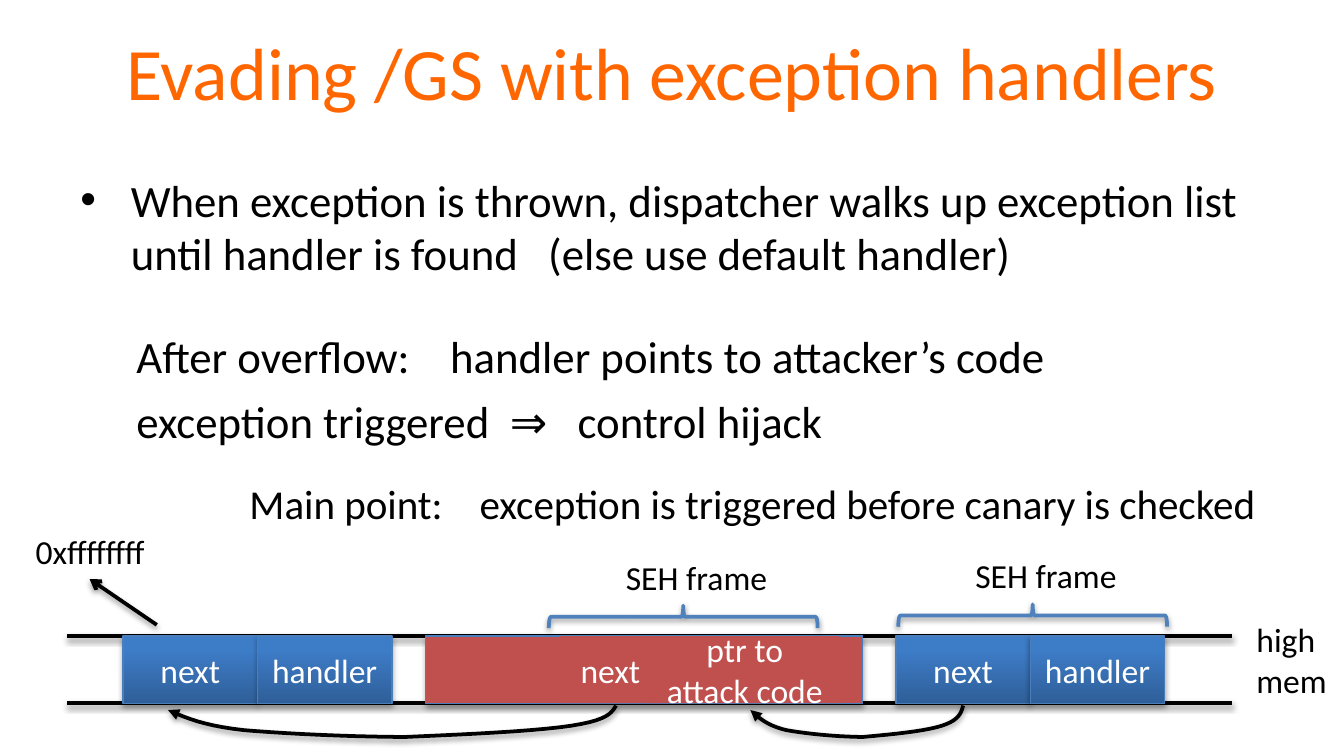
"""Slide on evading /GS through exception handlers, laid out on a 1/12 inch grid."""
from typing import NamedTuple

from lxml import etree
from pptx import Presentation
from pptx.dml.color import RGBColor
from pptx.enum.shapes import MSO_CONNECTOR, MSO_SHAPE
from pptx.enum.text import MSO_ANCHOR, MSO_AUTO_SIZE, PP_ALIGN
from pptx.oxml.ns import qn
from pptx.util import Emu, Inches, Pt

RECT, BRACE = MSO_SHAPE.RECTANGLE, MSO_SHAPE.LEFT_BRACE
STRAIGHT = MSO_CONNECTOR.STRAIGHT
LEFT, CENTER = PP_ALIGN.LEFT, PP_ALIGN.CENTER
TOP, MIDDLE = MSO_ANCHOR.TOP, MSO_ANCHOR.MIDDLE
GROW = MSO_AUTO_SIZE.SHAPE_TO_FIT_TEXT

FONT = "Calibri"
BLACK, WHITE, ORANGE = "000000", "FFFFFF", "FF6600"
RED, BLUE, EDGE = "C0504D", "4F81BD", "4B7EBC"
GRADIENT = ((0, "2F5F99"), (0.8, "3D7CC7"))
MEM_TOP, MEM_ROWS = 56.8, 6
SAG = ((0, 63), (0.01, 63.7), (0.02, 64.3), (0.1, 64.8), (0.18, 65.3),
       (0.35, 65.6), (0.47, 65.8), (0.59, 65.8), (0.74, 65.5), (0.83, 65.2),
       (0.92, 64.8), (0.96, 64.1), (1, 63.4))


class Label(NamedTuple):
    """Unwrapped text at a grid place."""
    text: str
    col: float
    row: float
    cols: float
    rows: float
    size: float = 18


class Cell(NamedTuple):
    """Block of stack memory, with its width in columns."""
    text: str
    col: float
    cols: float
    fill: str | None = None
    edge: str | None = EDGE


FRAME_COLS = (11, 80)
CELLS = [Cell(text, col + 12 * i, 12) for col in FRAME_COLS
         for i, text in enumerate(("next", "handler"))]
CELLS += [Cell("", 38, 39, RED), Cell("ptr to attack code", 58, 17, RED, None),
          Cell("next", 50, 9, RED, None)]
BRACES = ((49, 54.08), (80.2, 53.96))
LINKS = ((86, 67), (55, 15))
LABELS = (
    Label("high\nmem", 111, 54.7, 8.8, 8.5),
    Label("0xffffffff", 2, 46.8, 12.4, 4.8),
    Label("SEH frame", 85.9, 49, 15.2, 4.8),
    Label("SEH frame", 54.7, 49.1, 15.2, 4.8),
    Label("After overflow:    handler points to attacker’s code\n"
          "exception triggered  ⇒   control hijack", 11, 28.8, 84.8, 11.9, 24),
    Label("Main point:    exception is triggered before canary is checked",
          21.1, 42.1, 93.8, 5.6, 22),
)


def g(units: float) -> Emu:
    """Convert grid units to a length."""
    return Inches(units / 12)


def rgb(value: str) -> RGBColor:
    """Turn a hex string into a colour."""
    return RGBColor.from_string(value)


def write(tf, text: str, *, size: float = 18, color: str = BLACK, align=LEFT,
          anchor=TOP, wrap: bool = True, before: float = 0) -> None:
    """Fill a text frame, one paragraph for each line of text."""
    tf.word_wrap, tf.vertical_anchor = wrap, anchor
    for i, line in enumerate(text.split("\n")):
        p = tf.paragraphs[0] if i == 0 else tf.add_paragraph()
        p.alignment = align
        p.space_before = Pt(before)
        r = p.add_run()
        r.text = line
        r.font.name, r.font.size = FONT, Pt(size)
        r.font.color.rgb = rgb(color)


def stroke(sp, color: str, width: float = 2, head: str | None = None) -> None:
    """Draw the outline, with an optional arrowhead at its end."""
    sp.line.color.rgb = rgb(color)
    sp.line.width = Pt(width)
    if head:
        ln = sp._element.spPr.find(qn("a:ln"))
        etree.SubElement(ln, qn("a:tailEnd"), type=head)


def shade(sp, alpha: int = 38, dist: float = 1.6) -> None:
    """Cast a soft shadow straight down, or none when alpha is zero."""
    effects = etree.SubElement(sp._element.spPr, qn("a:effectLst"))
    if alpha:
        shadow = etree.SubElement(effects, qn("a:outerShdw"), blurRad=str(Pt(3.1)),
                                  dist=str(Pt(dist)), dir="5400000", rotWithShape="0")
        color = etree.SubElement(shadow, qn("a:srgbClr"), val=BLACK)
        etree.SubElement(color, qn("a:alpha"), val=str(alpha * 1000))


def add_label(s, label: Label) -> None:
    """Add a text box that grows with its text."""
    sp = s.shapes.add_textbox(g(label.col), g(label.row), g(label.cols), g(label.rows))
    write(sp.text_frame, label.text, size=label.size, wrap=False)
    sp.text_frame.auto_size = GROW
    for p in sp.text_frame.paragraphs[1:]:
        p.space_before = Pt(6 if label.size == 24 else 0)


def add_cell(s, cell: Cell) -> None:
    """Add a memory block, with a blue gradient unless it has a fill."""
    sp = s.shapes.add_shape(RECT, g(cell.col), g(MEM_TOP), g(cell.cols), g(MEM_ROWS))
    if cell.fill:
        sp.fill.solid()
        sp.fill.fore_color.rgb = rgb(cell.fill)
    else:
        sp.fill.gradient()
        sp.fill.gradient_angle = 90
        for stop, (position, color) in zip(sp.fill.gradient_stops, GRADIENT):
            stop.position, stop.color.rgb = position, rgb(color)
    if cell.edge:
        stroke(sp, cell.edge, 0.75)
    else:
        sp.line.fill.background()
    shade(sp, 35 if cell.edge else 0, 1.8)
    if cell.text:
        write(sp.text_frame, cell.text, color=WHITE, align=CENTER, anchor=MIDDLE)


def add_line(s, start: tuple, end: tuple, head: str | None = None) -> None:
    """Add a straight black line between two grid points."""
    sp = s.shapes.add_connector(STRAIGHT, *map(g, (*start, *end)))
    stroke(sp, BLACK, head=head)
    shade(sp)


def add_brace(s, col: float, row: float) -> None:
    """Add an upward brace over a frame of 24 columns."""
    cols, rows = 24, 2
    sp = s.shapes.add_shape(BRACE, g(col + (cols - rows) / 2),
                            g(row - (cols - rows) / 2), g(rows), g(cols))
    sp.rotation = 90
    sp.fill.background()
    stroke(sp, BLUE)
    shade(sp)


def bezier(a: tuple, b: tuple, c: tuple, d: tuple, t: float) -> tuple:
    """Return the point at share t of a cubic curve."""
    u = 1 - t
    return tuple(u**3 * i + 3 * u * u * t * j + 3 * u * t * t * k + t**3 * m
                 for i, j, k, m in zip(a, b, c, d))


def add_link(s, start: float, end: float, steps: int = 10) -> None:
    """Add a sagging arrow below memory between two columns."""
    nodes = [(start + share * (end - start), row) for share, row in SAG]
    points = [bezier(*nodes[i:i + 4], n / steps)
              for i in range(0, len(nodes) - 1, 3) for n in range(1, steps + 1)]
    builder = s.shapes.build_freeform(*map(g, nodes[0]))
    builder.add_line_segments([(g(x), g(y)) for x, y in points], close=False)
    sp = builder.convert_to_shape()
    sp.fill.background()
    stroke(sp, BLACK, head="triangle")
    shade(sp)


def add_bullet(s, text: str) -> None:
    """Add the bulleted statement with a hanging indent."""
    sp = s.shapes.add_textbox(g(6), g(14.8), g(108), g(13))
    write(sp.text_frame, text, size=24, before=4.8)
    pPr = sp.text_frame.paragraphs[0]._p.get_or_add_pPr()
    pPr.set("marL", str(g(4.5)))
    pPr.set("indent", str(-g(4.5)))
    etree.SubElement(pPr, qn("a:buFont"), typeface="Arial")
    etree.SubElement(pPr, qn("a:buChar"), char="•")


def main() -> None:
    """Build and save the slide."""
    prs = Presentation()
    prs.slide_width, prs.slide_height = g(120), g(67.5)
    s = prs.slides.add_slide(prs.slide_layouts[5])
    title = s.shapes.title
    title.left, title.top, title.width, title.height = map(g, (6, 0.7, 108, 11.3))
    write(title.text_frame, "Evading /GS with exception handlers", size=39.6,
          color=ORANGE, align=CENTER, anchor=MIDDLE)
    add_bullet(s, "When exception is thrown, dispatcher walks up exception list "
                  "until handler is found   (else use default handler)")
    for row in (MEM_TOP, MEM_TOP + MEM_ROWS):
        add_line(s, (6, row), (110, row))
    for cell in CELLS:
        add_cell(s, cell)
    for start, end in LINKS:
        add_link(s, start, end)
    add_line(s, (14, 55.8), (8, 51.7), head="arrow")
    for col, row in BRACES:
        add_brace(s, col, row)
    for label in LABELS:
        add_label(s, label)
    prs.save("out.pptx")


if __name__ == "__main__":
    main()
